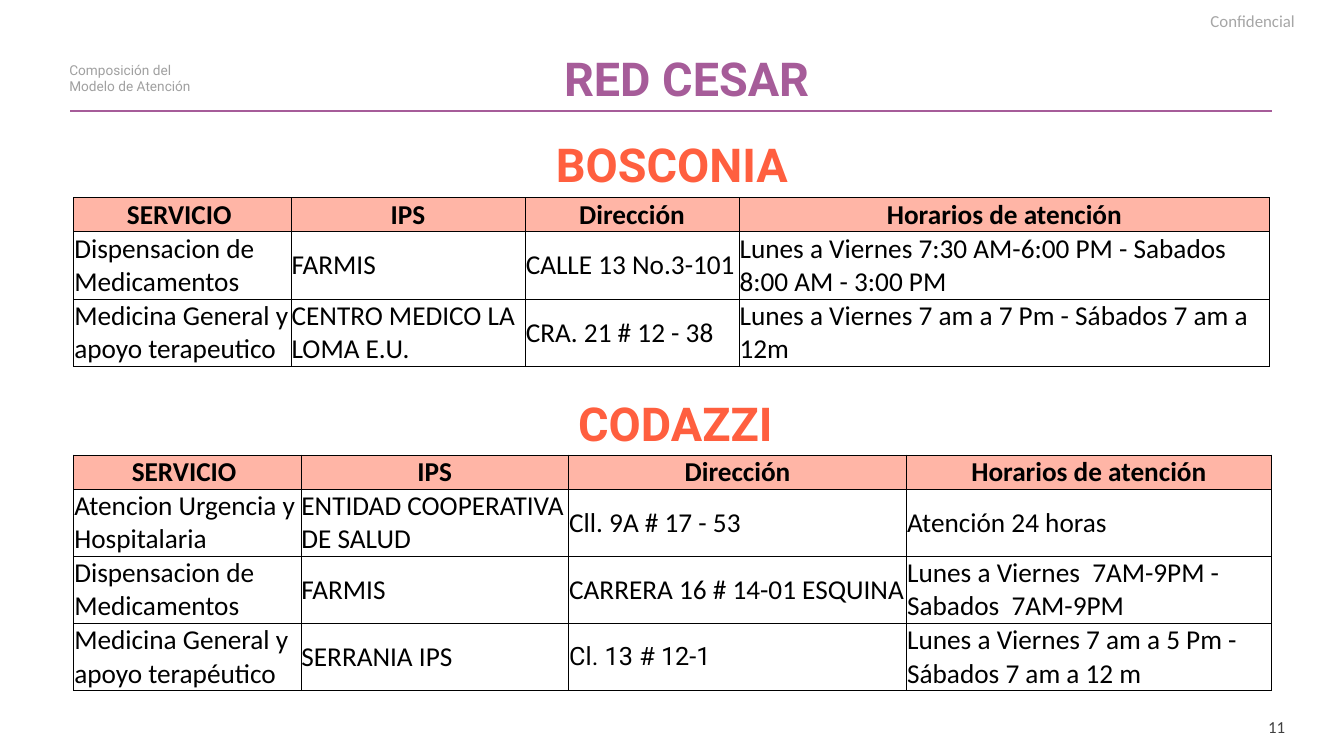
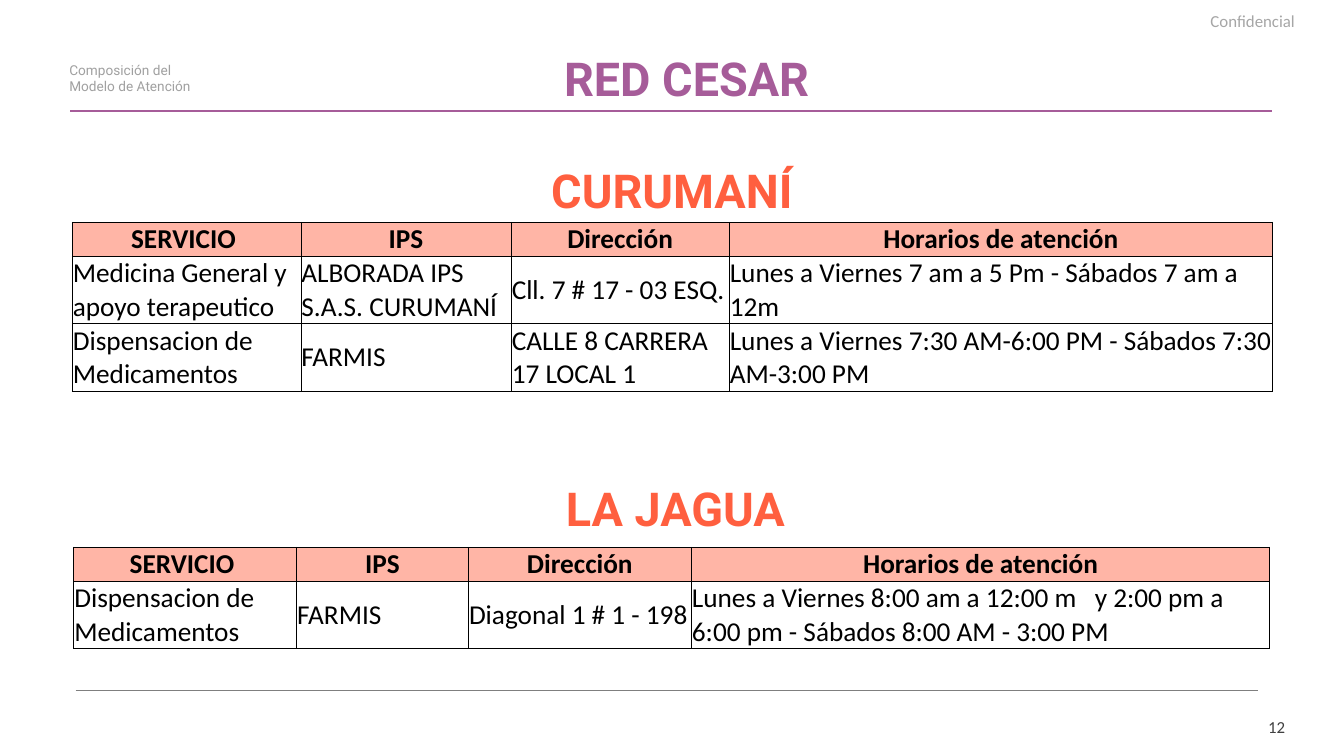
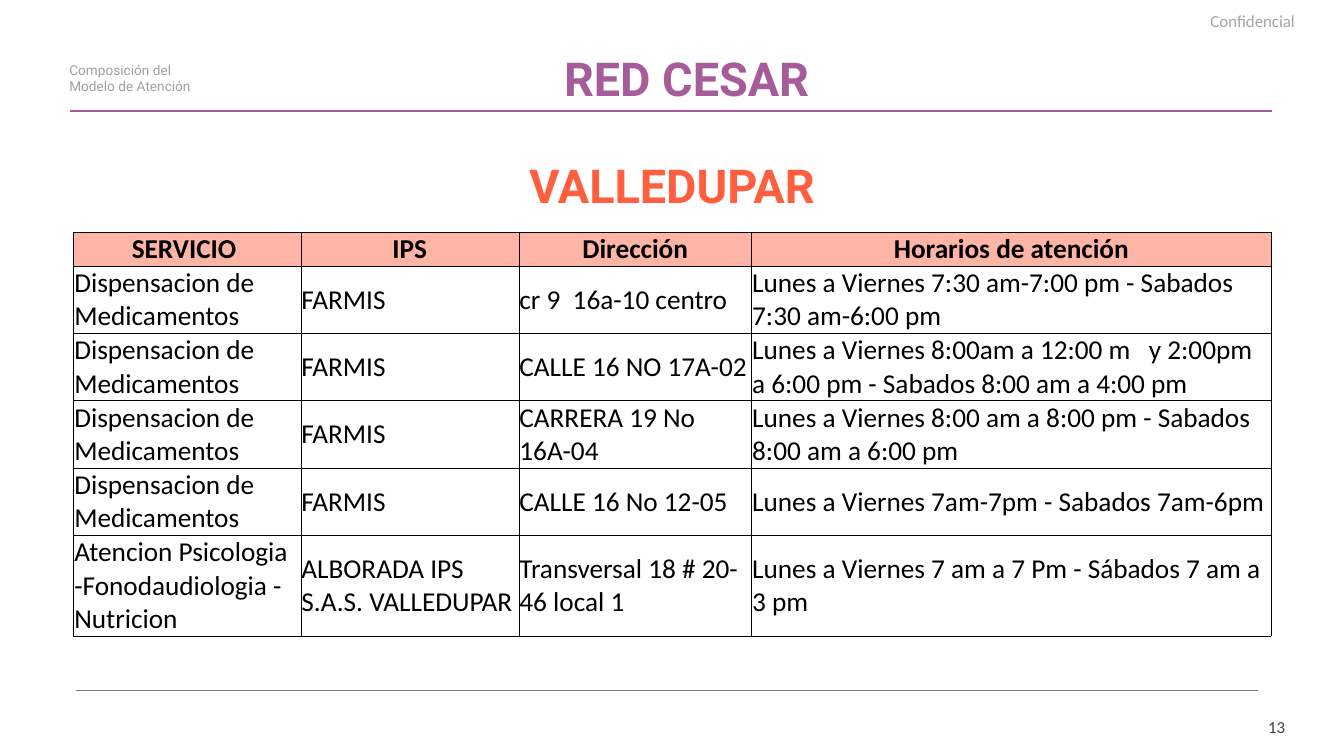
from collections import namedtuple
from math import ceil

from lxml import etree
from pptx import Presentation
from pptx.dml.color import RGBColor
from pptx.enum.shapes import MSO_CONNECTOR
from pptx.enum.text import MSO_ANCHOR as Anchor, MSO_AUTO_SIZE as AutoSize, PP_ALIGN as Align
from pptx.oxml.ns import qn
from pptx.util import Inches, Pt

COLORS = {
    "purple": "A65C99",
    "orange": "FF5F3F",
    "salmon": "FFB5A6",
    "black": "000000",
    "number": "404040",
    "label": "A0A0A0",
    "notice": "A6A6A6",
    "rule": "7F7F7F",
}

Style = namedtuple("Style", "font size color bold", defaults=(False,))
TITLE = Style("Roboto", 48, "purple", True)
TOWN = Style("Roboto", 48, "orange", True)
LABEL = Style("Roboto", 14, "label")
NOTICE = Style("Calibri", 17.3, "notice")
NUMBER = Style("Calibri", 17.3, "number")
HEADER = Style("Calibri", 28, "black", True)
BODY = Style("Calibri", 28, "black")
BODY_ALT = Style("Roboto", 25.9, "black")

DEFAULT_INSETS = (0.1, 0.05, 0.1, 0.05)
CELL_INSETS = (0.01, 0.01, 0.01, 0)
LINE_HEIGHT = 0.47
SERVICE_CHARS = 18
FIRST_NUMBER = 11

COLUMNS = ("SERVICIO ", "IPS", "Dirección", "Horarios de atención")
PHARMACY = "Dispensacion de Medicamentos"
GENERAL = "Medicina General y apoyo terapeutico"


class Deck:
    def __init__(self):
        self.file = Presentation()
        self.file.slide_width = Inches(19.17)
        self.file.slide_height = Inches(10.79)
        self.page = None

    def span(self, paragraph, text, style, align=Align.LEFT):
        paragraph.alignment = align
        span = paragraph.add_run()
        span.text = text
        span.font.name = style.font
        span.font.size = Pt(style.size)
        span.font.bold = style.bold
        span.font.color.rgb = RGBColor.from_string(COLORS[style.color])

    def fit(self, frame, insets, anchor):
        frame.word_wrap = True
        frame.auto_size = AutoSize.NONE
        frame.vertical_anchor = anchor
        (frame.margin_left, frame.margin_top,
         frame.margin_right, frame.margin_bottom) = map(Inches, insets)

    def title(self, text, left, top, width, height):
        box = self.page.shapes.title
        box.left, box.top, box.width, box.height = map(Inches, (left, top, width, height))
        self.fit(box.text_frame, DEFAULT_INSETS, Anchor.TOP)
        self.span(box.text_frame.paragraphs[0], text, TITLE, Align.CENTER)

    def text(self, text, style, left, top, width, height, align=Align.LEFT,
             insets=DEFAULT_INSETS, anchor=Anchor.TOP, spacing=1.0):
        box = self.page.shapes.add_textbox(*map(Inches, (left, top, width, height)))
        self.fit(box.text_frame, insets, anchor)
        paragraph = box.text_frame.paragraphs[0]
        paragraph.line_spacing = spacing
        self.span(paragraph, text, style, align)

    def rule(self, left, right, top, color, weight):
        line = self.page.shapes.add_connector(
            MSO_CONNECTOR.STRAIGHT, *map(Inches, (left, top, right, top)))
        line.line.color.rgb = RGBColor.from_string(COLORS[color])
        line.line.width = Pt(weight)
        etree.SubElement(line._element.spPr, qn("a:effectLst"))

    def start_page(self, number):
        """Add a slide with the header, rules and footer that all slides share."""
        self.page = self.file.slides.add_slide(self.file.slide_layouts[5])
        self.text(str(number), NUMBER, 17.86, 10.23, 0.47, 0.29, Align.RIGHT,
                  (0, 0, 0, 0), Anchor.BOTTOM)
        self.text("Confidencial", NOTICE, 13.78, 0.06, 4.75, 0.42, Align.RIGHT,
                  (0.06, 0.06, 0.06, 0.06), spacing=1.1)
        self.rule(1.08, 17.95, 9.86, "rule", 1)
        self.rule(1, 18.15, 1.58, "purple", 2.25)
        self.text("Composición del Modelo de Atención", LABEL, 0.89, 0.83, 2.3, 0.57)
        self.title("RED CESAR", 2.98, 0.66, 13.63, 0.91)

    def town(self, name, left, top):
        self.text(name, TOWN, left, top, 17.07, 0.91, Align.CENTER)

    def borders(self, cell):
        """Draw thin lines on the four sides, ahead of the fill as the schema asks."""
        properties = cell._tc.get_or_add_tcPr()
        for index, side in enumerate(("lnL", "lnR", "lnT", "lnB")):
            line = etree.Element(qn(f"a:{side}"), w=str(Pt(0.5)))
            fill = etree.SubElement(line, qn("a:solidFill"))
            etree.SubElement(fill, qn("a:srgbClr"), val=COLORS["black"])
            properties.insert(index, line)

    def cell(self, cell, content, is_header):
        text, style = content if isinstance(content, tuple) else (content, BODY)
        if is_header:
            cell.fill.solid()
            cell.fill.fore_color.rgb = RGBColor.from_string(COLORS["salmon"])
        else:
            cell.fill.background()
        cell.vertical_anchor = Anchor.MIDDLE
        (cell.margin_left, cell.margin_top,
         cell.margin_right, cell.margin_bottom) = map(Inches, CELL_INSETS)
        self.span(cell.text_frame.paragraphs[0], text,
                  HEADER if is_header else style,
                  Align.CENTER if is_header else Align.LEFT)
        self.borders(cell)

    def table(self, left, top, widths, rows):
        heights = [LINE_HEIGHT] + [
            LINE_HEIGHT * ceil(len(row[0]) / SERVICE_CHARS) for row in rows]
        frame = self.page.shapes.add_table(
            len(heights), len(widths),
            *map(Inches, (left, top, sum(widths), sum(heights))))
        table = frame.table
        table.horz_banding = False
        for column, width in zip(table.columns, widths):
            column.width = Inches(width)
        for row, height in zip(table.rows, heights):
            row.height = Inches(height)
        for r, row in enumerate([COLUMNS, *rows]):
            for c, content in enumerate(row):
                self.cell(table.cell(r, c), content, r == 0)


def bosconia_codazzi(deck):
    deck.town("BOSCONIA", 1.05, 1.89)
    deck.table(1.05, 2.82, (3.1, 3.34, 3.05, 7.57), [
        (PHARMACY, "FARMIS", "CALLE 13 No.3-101",
         "Lunes a Viernes 7:30 AM-6:00 PM - Sabados 8:00 AM - 3:00 PM"),
        (GENERAL, "CENTRO MEDICO LA LOMA E.U.", "CRA. 21 # 12 - 38",
         "Lunes a Viernes 7 am a 7 Pm - Sábados 7 am a 12m"),
    ])
    deck.town("CODAZZI", 1.1, 5.59)
    deck.table(1.05, 6.49, (3.24, 3.82, 4.82, 5.2), [
        ("Atencion Urgencia y Hospitalaria", "ENTIDAD COOPERATIVA DE SALUD",
         "Cll. 9A # 17 - 53", "Atención 24 horas"),
        (PHARMACY, "FARMIS", "CARRERA 16 # 14-01 ESQUINA",
         "Lunes a Viernes  7AM-9PM - Sabados  7AM-9PM"),
        ("Medicina General y apoyo terapéutico", "SERRANIA IPS",
         ("Cl. 13 # 12-1", BODY_ALT),
         "Lunes a Viernes 7 am a 5 Pm - Sábados 7 am a 12 m"),
    ])


def curumani_la_jagua(deck):
    deck.town("CURUMANÍ", 1.05, 2.26)
    deck.table(1.03, 3.17, (3.26, 3, 3.11, 7.75), [
        (GENERAL, "ALBORADA IPS S.A.S. CURUMANÍ", "Cll. 7 # 17 - 03 ESQ.",
         "Lunes a Viernes 7 am a 5 Pm - Sábados 7 am a 12m"),
        (PHARMACY, "FARMIS", "CALLE 8 CARRERA 17 LOCAL 1",
         "Lunes a Viernes 7:30 AM-6:00 PM - Sábados 7:30 AM-3:00 PM"),
    ])
    deck.town("LA JAGUA", 1.1, 6.8)
    deck.table(1.05, 7.81, (3.18, 2.45, 3.18, 8.25), [
        (PHARMACY, "FARMIS", "Diagonal 1 # 1 - 198",
         "Lunes a Viernes 8:00 am a 12:00 m   y 2:00 pm a 6:00 pm"
         " - Sábados 8:00 AM - 3:00 PM"),
    ])


def valledupar(deck):
    deck.town("VALLEDUPAR", 1.05, 2.19)
    deck.table(1.05, 3.31, (3.24, 3.11, 3.32, 7.41), [
        (PHARMACY, "FARMIS", "cr 9  16a-10 centro",
         "Lunes a Viernes 7:30 am-7:00 pm - Sabados 7:30 am-6:00 pm"),
        (PHARMACY, "FARMIS", "CALLE 16 NO 17A-02",
         "Lunes a Viernes 8:00am a 12:00 m   y 2:00pm a 6:00 pm"
         " - Sabados 8:00 am a 4:00 pm"),
        (PHARMACY, "FARMIS", "CARRERA 19 No 16A-04",
         "Lunes a Viernes 8:00 am a 8:00 pm - Sabados 8:00 am a 6:00 pm"),
        (PHARMACY, "FARMIS", "CALLE 16 No 12-05",
         "Lunes a Viernes 7am-7pm - Sabados 7am-6pm"),
        ("Atencion Psicologia -Fonodaudiologia - Nutricion",
         "ALBORADA IPS S.A.S. VALLEDUPAR", "Transversal 18 # 20-46 local 1",
         "Lunes a Viernes 7 am a 7 Pm - Sábados 7 am a 3 pm"),
    ])


def main():
    deck = Deck()
    pages = (bosconia_codazzi, curumani_la_jagua, valledupar)
    for number, fill_page in enumerate(pages, FIRST_NUMBER):
        deck.start_page(number)
        fill_page(deck)
    deck.file.save("out.pptx")


if __name__ == "__main__":
    main()
